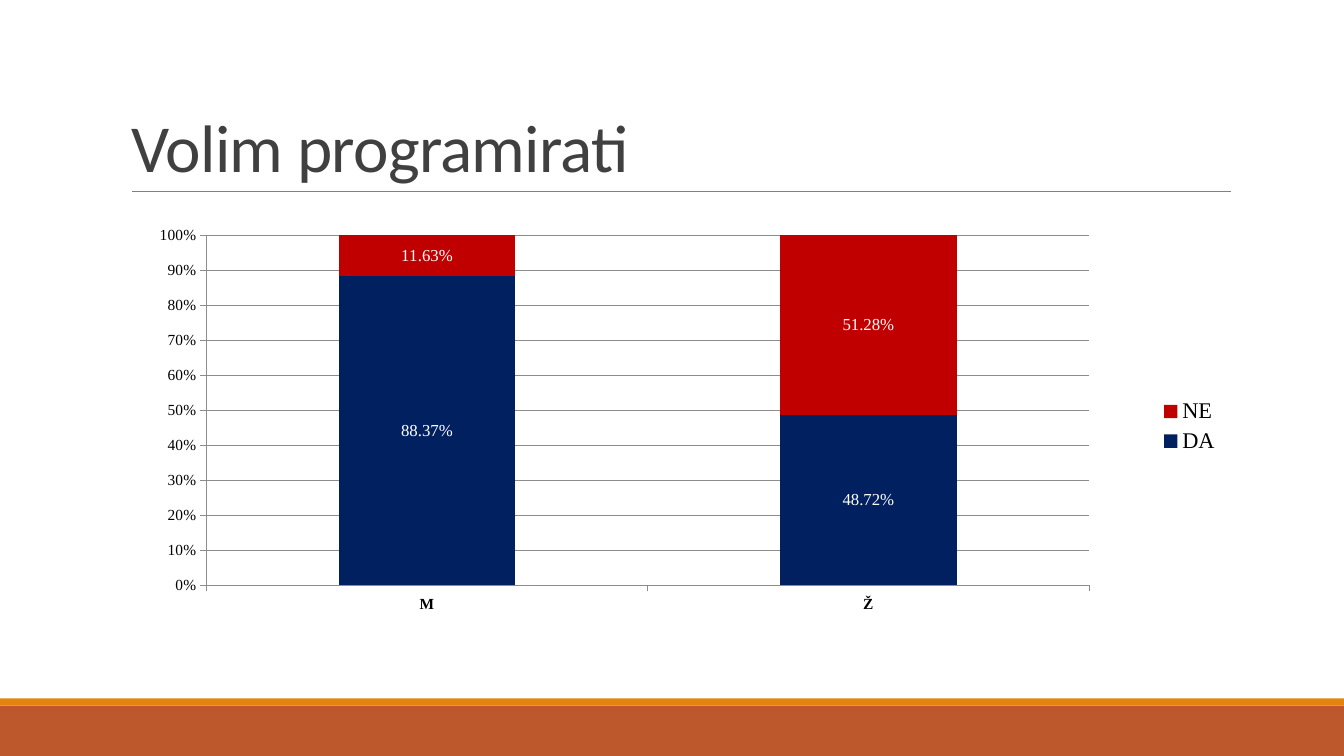
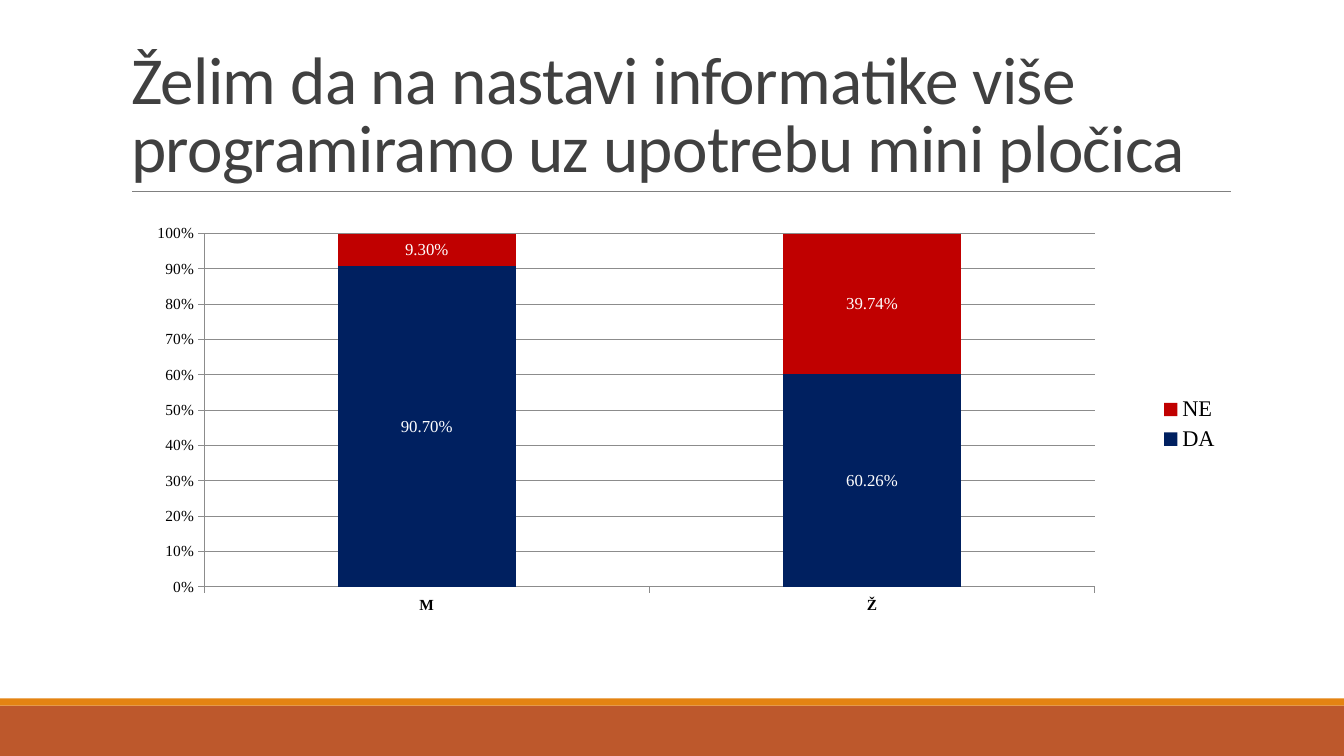
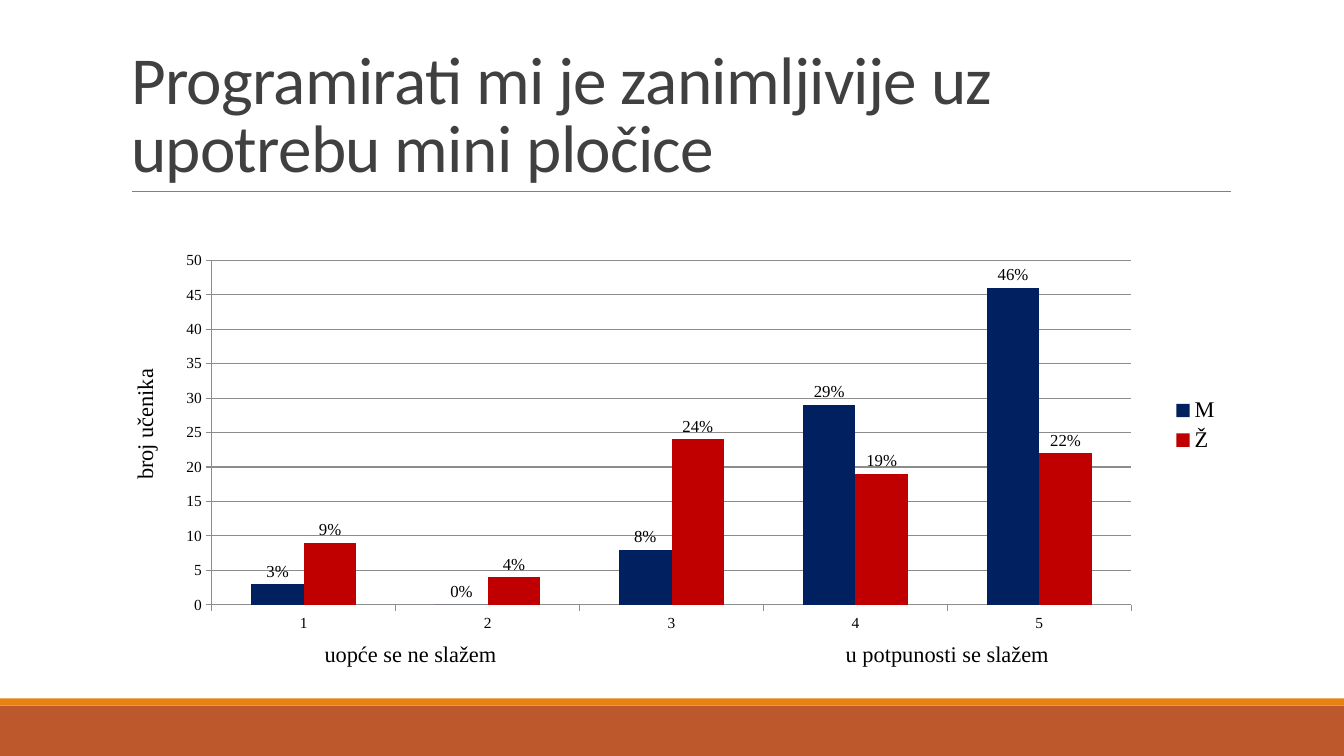
from lxml.etree import SubElement
from pptx import Presentation
from pptx.chart.data import CategoryChartData
from pptx.dml.color import RGBColor
from pptx.enum.chart import XL_CHART_TYPE, XL_LABEL_POSITION, XL_LEGEND_POSITION, XL_TICK_MARK
from pptx.enum.shapes import MSO_CONNECTOR, MSO_SHAPE
from pptx.enum.text import MSO_ANCHOR, MSO_AUTO_SIZE, PP_ALIGN
from pptx.oxml.ns import qn
from pptx.util import Inches, Pt

RUST = RGBColor(0xBD, 0x58, 0x2C)
ORANGE = RGBColor(0xE4, 0x83, 0x12)
RULE = RGBColor(0x80, 0x80, 0x80)
GRID = RGBColor(0x8C, 0x8C, 0x8C)
DARK = RGBColor(0x40, 0x40, 0x40)
NAVY = RGBColor(0x00, 0x20, 0x60)
RED = RGBColor(0xC0, 0x00, 0x00)
BLACK = RGBColor(0x00, 0x00, 0x00)
WHITE = RGBColor(0xFF, 0xFF, 0xFF)
SANS = "Calibri"
SERIF = "Times New Roman"


def set_font(font, size, color=BLACK, name=SERIF, bold=False):
    """Format a font of a run or of a chart part."""
    font.size, font.name, font.bold = Pt(size), name, bold
    font.color.rgb = color


def write_text(tf, text, spacing=1.07, after=8, tracking=0, anchor=MSO_ANCHOR.TOP, **fmt):
    """Write one formatted paragraph into a text frame."""
    tf.auto_size = MSO_AUTO_SIZE.NONE
    tf.vertical_anchor = anchor
    p = tf.paragraphs[0]
    p.alignment = PP_ALIGN.LEFT
    p.line_spacing = spacing
    p.space_after = Pt(after)
    r = p.add_run()
    r.text = text
    set_font(r.font, **fmt)
    if tracking:
        r.font._element.set("spc", str(tracking))


def add_band(s, top, height, color):
    """Draw a full-width band."""
    sp = s.shapes.add_shape(MSO_SHAPE.RECTANGLE, 0, Inches(top), Inches(13.33), Inches(height))
    sp.shadow.inherit = False
    sp.fill.solid()
    sp.fill.fore_color.rgb = color
    sp.line.fill.background()
    return sp


def add_rule(s):
    """Draw the thin line under the title."""
    line = s.shapes.add_connector(
        MSO_CONNECTOR.STRAIGHT, Inches(1.31), Inches(1.9), Inches(12.21), Inches(1.9))
    line.line.color.rgb = RULE
    line.line.width = Pt(0.5)
    SubElement(line.element.spPr, qn("a:effectLst"))
    return line


def style_layout(layout, s):
    """Move the bands and the rule to the layout and place its title."""
    for sp in (add_band(s, 7, 0.5, RUST), add_band(s, 6.93, 0.07, ORANGE), add_rule(s)):
        layout.shapes.element.append(sp.element)
    title = next(sp for sp in layout.placeholders if sp.placeholder_format.idx == 0)
    title.left, title.top = Inches(1.2), Inches(0.31)
    title.width, title.height = Inches(11), Inches(1.59)


def add_title(s, text):
    """Fill the title placeholder."""
    write_text(s.shapes.title.text_frame, text, spacing=0.85, after=0, tracking=-50,
               anchor=MSO_ANCHOR.BOTTOM, size=48, color=DARK, name=SANS)


def add_note(s, text, left, top, width, height, vertical=False):
    """Add an axis caption, upright or turned to read upwards."""
    sp = s.shapes.add_textbox(Inches(left), Inches(top), Inches(width), Inches(height))
    sp.text_frame.word_wrap = not vertical
    if vertical:
        sp.element.txBody.bodyPr.set("vert", "vert270")
    write_text(sp.text_frame, text, size=16)


def set_plot_layout(chart, box):
    """Fix the inner plot area as fractions of the chart."""
    area = chart.element.chart.plotArea
    for old in area.findall(qn("c:layout")):
        area.remove(old)
    layout = SubElement(area, qn("c:layout"))
    area.insert(0, layout)
    manual = SubElement(layout, qn("c:manualLayout"))
    values = [("layoutTarget", "inner"), ("xMode", "edge"), ("yMode", "edge")]
    for tag, val in values + list(zip("xywh", box)):
        SubElement(manual, qn(f"c:{tag}")).set("val", str(val))


def style_axis(axis, width, bold=False):
    """Format an axis line, its ticks and its labels."""
    axis.major_tick_mark = XL_TICK_MARK.OUTSIDE
    axis.minor_tick_mark = XL_TICK_MARK.NONE
    axis.format.line.color.rgb = GRID
    axis.format.line.width = Pt(width)
    set_font(axis.tick_labels.font, 11, bold=bold)


def add_columns(s, top, cats, series, box, stacked=True, width=0.75):
    """Add a column chart, stacked to 100 % or clustered."""
    data = CategoryChartData()
    data.categories = cats
    for name, values in series:
        data.add_series(name, values)
    kind = XL_CHART_TYPE.COLUMN_STACKED_100 if stacked else XL_CHART_TYPE.COLUMN_CLUSTERED
    chart = s.shapes.add_chart(
        kind, Inches(1.2), Inches(top), Inches(11), Inches(4.4), data).chart
    chart.has_title = False
    set_font(chart.font, 11)
    set_plot_layout(chart, box)
    chart.has_legend = True
    chart.legend.position = XL_LEGEND_POSITION.RIGHT
    chart.legend.include_in_layout = False
    set_font(chart.legend.font, 16)

    style_axis(chart.category_axis, width, bold=stacked)
    axis = chart.value_axis
    style_axis(axis, width)
    axis.has_major_gridlines = True
    axis.major_gridlines.format.line.color.rgb = GRID
    axis.major_gridlines.format.line.width = Pt(width)
    axis.minimum_scale = 0
    axis.maximum_scale, axis.major_unit = (1, 0.1) if stacked else (50, 5)
    axis.tick_labels.number_format = "0%" if stacked else "0"
    axis.tick_labels.number_format_is_linked = False

    plot = chart.plots[0]
    plot.gap_width = 150
    plot.overlap = 100 if stacked else 0
    plot.vary_by_categories = False
    for ser, color in zip(plot.series, (NAVY, RED)):
        ser.invert_if_negative = False
        ser.format.fill.solid()
        ser.format.fill.fore_color.rgb = color
        labels = ser.data_labels
        labels.show_value = True
        labels.number_format = '0.00"%"' if stacked else '0"%"'
        labels.number_format_is_linked = False
        labels.position = XL_LABEL_POSITION.CENTER if stacked else XL_LABEL_POSITION.OUTSIDE_END
        set_font(labels.font, 12, WHITE if stacked else BLACK)


def main():
    """Build the three survey slides."""
    prs = Presentation()
    prs.slide_width, prs.slide_height = Inches(13.33), Inches(7.5)
    layout = prs.slide_layouts[5]
    genders = ("M", "Ž")

    s = prs.slides.add_slide(layout)
    style_layout(layout, s)
    add_title(s, "Volim programirati")
    add_columns(s, 2.03, genders, [("DA", (88.37, 48.72)), ("NE", (11.63, 51.28))],
                (0.077, 0.069, 0.796, 0.79), width=0.5)

    s = prs.slides.add_slide(layout)
    add_title(s, "Želim da na nastavi informatike više programiramo uz upotrebu mini pločica")
    add_columns(s, 2.01, genders, [("DA", (90.7, 60.26)), ("NE", (9.3, 39.74))],
                (0.075, 0.07, 0.803, 0.797))

    s = prs.slides.add_slide(layout)
    add_title(s, "Programirati mi je zanimljivije uz upotrebu mini pločice")
    add_columns(s, 2.02, ("1", "2", "3", "4", "5"),
                list(zip(genders, ((3, 0, 8, 29, 46), (9, 4, 24, 19, 22)))),
                (0.082, 0.128, 0.829, 0.777), stacked=False)
    add_note(s, "uopće se ne slažem", 3.12, 6.28, 2.11, 0.3)
    add_note(s, "u potpunosti se slažem", 8.29, 6.28, 2.47, 0.3)
    add_note(s, "broj učenika", 1.23, 3.58, 0.39, 1.28, vertical=True)

    prs.save("out.pptx")


if __name__ == "__main__":
    main()
